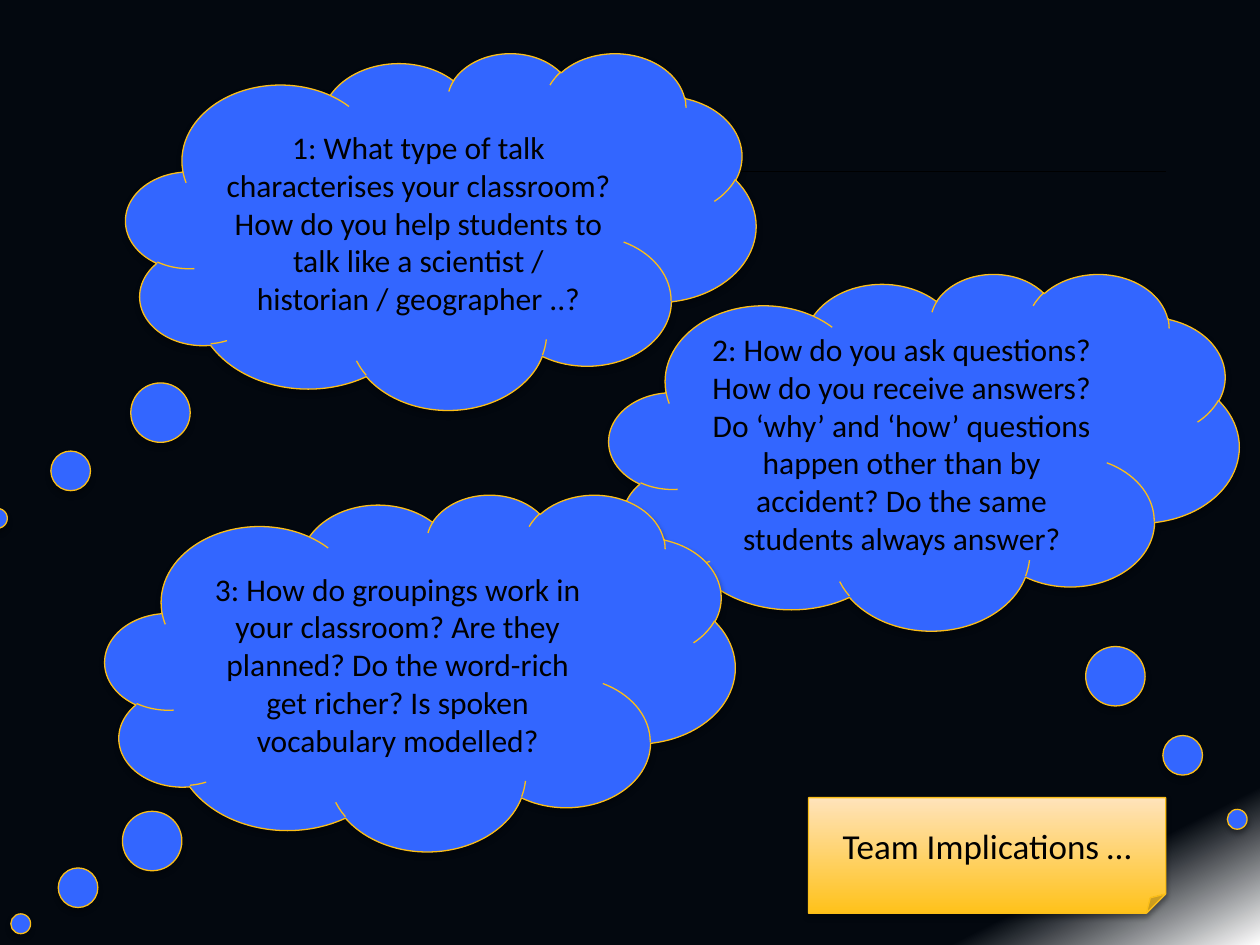
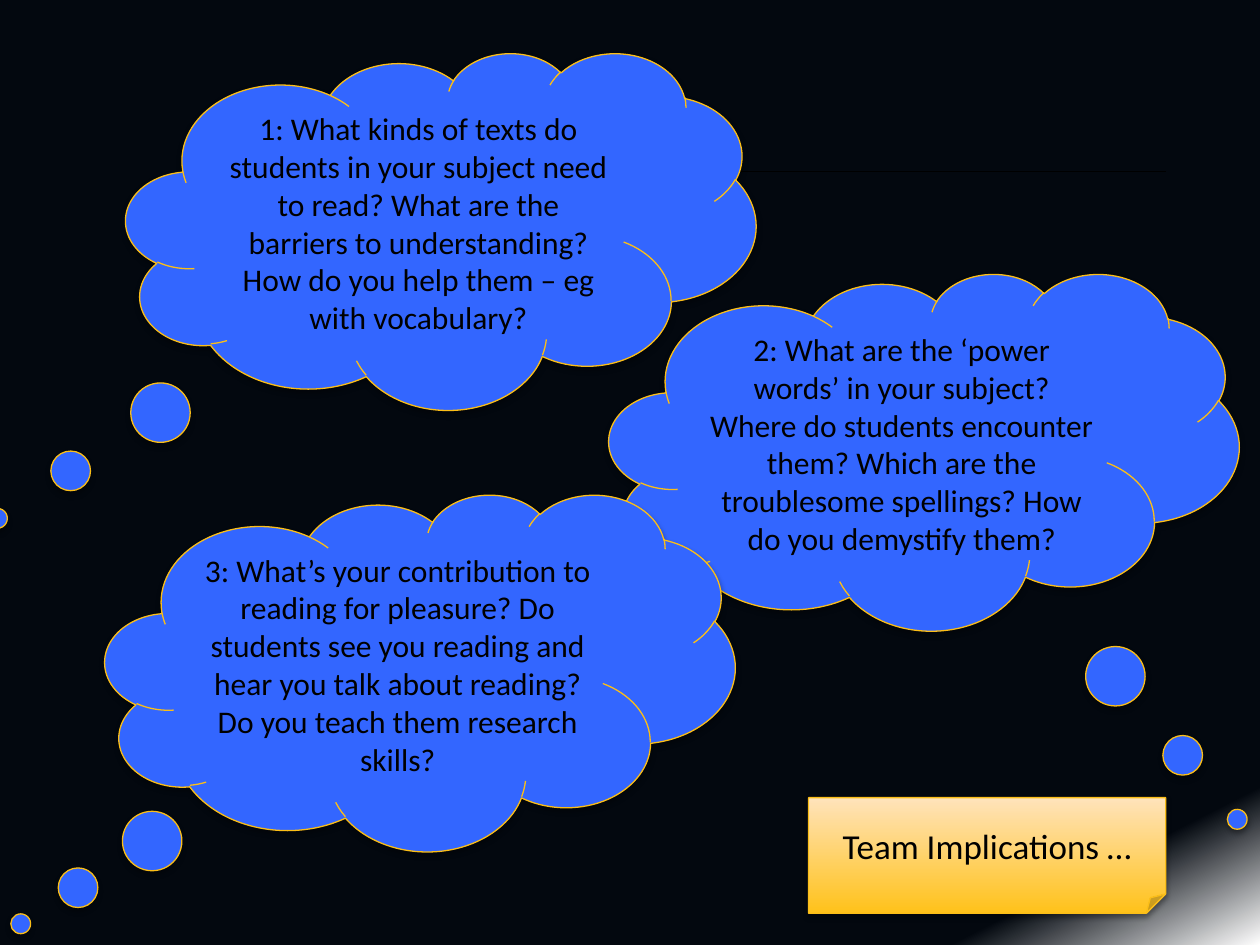
from dataclasses import dataclass

from lxml.etree import SubElement
from pptx import Presentation
from pptx.dml.color import RGBColor
from pptx.enum.shapes import MSO_CONNECTOR, MSO_SHAPE
from pptx.enum.text import MSO_ANCHOR, PP_ALIGN
from pptx.oxml.ns import qn
from pptx.util import Cm, Pt


@dataclass(frozen=True)
class Theme:
    font: str = "Calibri"
    question_size: int = 18
    note_size: int = 20
    line_width: float = 0.75
    ink: str = "000000"
    cloud: str = "3366FF"
    outline: str = "FBBE18"
    night: tuple = ((0, "03080F"), (90, "03080F"), (100, "FFFFFF"))
    amber: tuple = ((0, "FFC21A"), (100, "FFE3BB"))


THEME = Theme()

CLOUD_SIZE = (12.7, 7.19)
CLOUD_TOP, CLOUD_STEP = 1.06, 4.45
CLOUD_LEFTS = (2.54, 12.28, 2.12)
CLOUD_TAILS = ((-0.704, 0.806), (0.497, 1.031), (-0.634, 0.705))
NOTE_BOX = (16.3, 16.08, 7.2, 2.33)

TALK = (
    "1: What type of talk characterises your classroom? How do you help "
    "students to talk like a scientist / historian / geographer ..?",
    "2: How do you ask questions? How do you receive answers? Do ‘why’ and "
    "‘how’ questions happen other than by accident? Do the same students "
    "always answer?",
    "3: How do groupings work in your classroom? Are they planned? Do the "
    "word-rich get richer? Is spoken vocabulary modelled?",
)
READING = (
    "1: What kinds of texts do students in your subject need to read? What "
    "are the barriers to understanding? How do you help them – eg with "
    "vocabulary?",
    "2: What are the ‘power words’ in your subject? Where do students "
    "encounter them? Which are the troublesome spellings? How do you "
    "demystify them?",
    "3: What’s your contribution to reading for pleasure? Do students see "
    "you reading and hear you talk about reading? Do you teach them "
    "research skills?",
)


def rgb(value):
    return RGBColor.from_string(value)


def set_gradient(owner, fill, stops, angle):
    fill.gradient()
    grad = owner.element.find(".//" + qn("a:gradFill"))
    stop_list = grad.find(qn("a:gsLst"))
    for stop in list(stop_list):
        stop_list.remove(stop)
    for position, color in stops:
        stop = SubElement(stop_list, qn("a:gs"), pos=str(position * 1000))
        SubElement(stop, qn("a:srgbClr"), val=color)
    grad.find(qn("a:lin")).set("ang", str(angle * 60000))


def add_shadow(sp):
    sp.shadow.inherit = False
    effects = sp.element.spPr.find(qn("a:effectLst"))
    shadow = SubElement(effects, qn("a:outerShdw"), blurRad=str(Pt(3.1)),
                        dist=str(Pt(1.8)), dir="5400000", rotWithShape="0")
    color = SubElement(shadow, qn("a:srgbClr"), val=THEME.ink)
    SubElement(color, qn("a:alpha"), val="35000")


def write(sp, text, size, color=THEME.ink, align=PP_ALIGN.CENTER):
    tf = sp.text_frame
    tf.word_wrap = True
    tf.vertical_anchor = MSO_ANCHOR.MIDDLE
    p = tf.paragraphs[0]
    p.alignment = align
    r = p.add_run()
    r.text = text
    r.font.name = THEME.font
    r.font.size = Pt(size)
    r.font.color.rgb = rgb(color)


def add_outlined(s, kind, box):
    sp = s.shapes.add_shape(kind, *map(Cm, box))
    sp.line.color.rgb = rgb(THEME.outline)
    sp.line.width = Pt(THEME.line_width)
    add_shadow(sp)
    return sp


def add_backdrop(s):
    set_gradient(s, s.background.fill, THEME.night, 63)
    rule = s.shapes.add_connector(MSO_CONNECTOR.STRAIGHT,
                                  Cm(4.65), Cm(3.46), Cm(23.5), Cm(3.46))
    rule.line.color.rgb = rgb(THEME.ink)
    rule.line.width = Pt(THEME.line_width)
    SubElement(rule.element.spPr, qn("a:effectLst"))


def add_cloud(s, box, tail, question):
    sp = add_outlined(s, MSO_SHAPE.CLOUD_CALLOUT, box)
    sp.adjustments[0], sp.adjustments[1] = tail
    sp.fill.solid()
    sp.fill.fore_color.rgb = rgb(THEME.cloud)
    write(sp, question, THEME.question_size)


def add_note(s, box, text):
    sp = add_outlined(s, MSO_SHAPE.FOLDED_CORNER, box)
    set_gradient(sp, sp.fill, THEME.amber, 270)
    write(sp, text, THEME.note_size)


def add_question_slide(prs, questions):
    s = prs.slides.add_slide(prs.slide_layouts[6])
    add_backdrop(s)
    clouds = zip(CLOUD_LEFTS, CLOUD_TAILS, questions)
    for i, (left, tail, question) in enumerate(clouds):
        box = (left, CLOUD_TOP + i * CLOUD_STEP, *CLOUD_SIZE)
        add_cloud(s, box, tail, question)
    add_note(s, NOTE_BOX, "Team Implications …")


def main():
    prs = Presentation()
    prs.slide_width, prs.slide_height = Cm(25.4), Cm(19.05)
    for questions in (TALK, READING):
        add_question_slide(prs, questions)
    prs.save("out.pptx")


if __name__ == "__main__":
    main()
